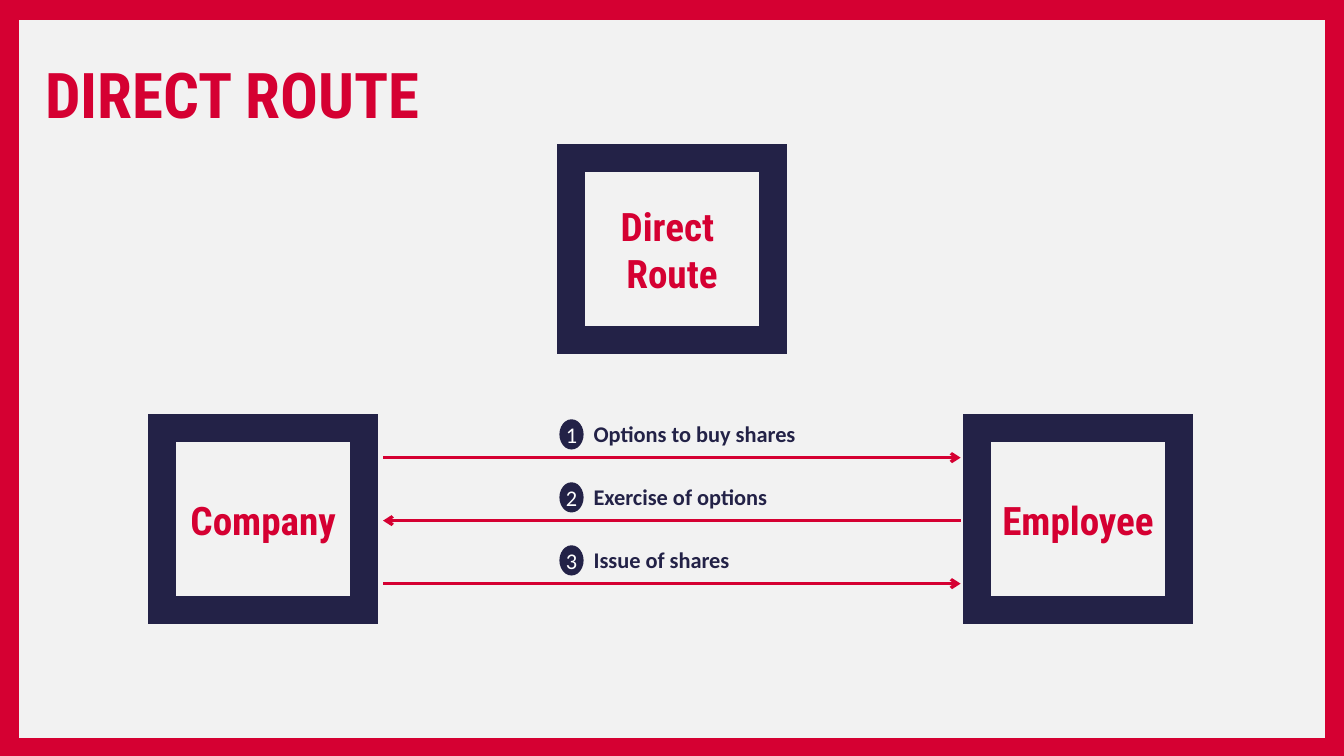
import pptx
import pptx.dml.color
import pptx.enum.shapes
import pptx.enum.text
import pptx.oxml.ns
import pptx.util
from lxml import etree

Pt = pptx.util.Pt
SHAPES = pptx.enum.shapes.MSO_SHAPE
ALIGN = pptx.enum.text.PP_ALIGN
ANCHOR = pptx.enum.text.MSO_ANCHOR
COLOURS = {"red": "D50032", "navy": "232247", "paper": "F2F2F2", "white": "FFFFFF"}
HEADING_FONT = "Roboto Condensed"
BODY_FONT = "Calibri"

PARTY_SIZE = (144, 130)
PARTIES = [("Direct \vRoute", 408, 113), ("Company", 116, 306), ("Employee", 698, 306)]
STEPS = [
    ("Options to buy shares", True),
    ("Exercise of options", False),
    ("Issue of shares", True),
]
STEPS_BOX = (273.6, 296.5, 412.6)
STEP_PITCH = 45


def colour(name):
    return pptx.dml.color.RGBColor.from_string(COLOURS[name])


def write(shape, text, font, size, ink, bold=True, align=ALIGN.LEFT):
    frame = shape.text_frame
    frame.word_wrap = True
    frame.vertical_anchor = ANCHOR.MIDDLE
    frame.text = text
    for para in frame.paragraphs:
        para.alignment = align
        for span in para.runs:
            span.font.name = font
            span.font.size = Pt(size)
            span.font.bold = bold
            span.font.color.rgb = colour(ink)


def add_block(page, kind, box, fill=None, line=None, width=0):
    """Add a flat preset shape; a missing fill or line is left out."""
    shape = page.shapes.add_shape(kind, *map(Pt, box))
    shape.shadow.inherit = False
    if fill:
        shape.fill.solid()
        shape.fill.fore_color.rgb = colour(fill)
    else:
        shape.fill.background()
    if line:
        shape.line.color.rgb = colour(line)
        shape.line.width = Pt(width)
        join = etree.SubElement(shape.line._get_or_add_ln(), pptx.oxml.ns.qn("a:miter"))
        join.set("lim", "800000")
    else:
        shape.line.fill.background()
    return shape


def add_arrow(page, start, end, y):
    arrow = page.shapes.add_connector(
        pptx.enum.shapes.MSO_CONNECTOR.STRAIGHT, Pt(start), Pt(y), Pt(end), Pt(y))
    arrow.line.color.rgb = colour("red")
    arrow.line.width = Pt(2.25)
    tip = etree.SubElement(arrow.line._get_or_add_ln(), pptx.oxml.ns.qn("a:tailEnd"))
    tip.set("type", "arrow")
    etree.SubElement(arrow._element.spPr, pptx.oxml.ns.qn("a:effectLst"))


def add_title(page, left, top, width, height):
    title = page.shapes.title
    title.left, title.top, title.width, title.height = map(Pt, (left, top, width, height))
    write(title, "DIRECT ROUTE", HEADING_FONT, 45, "red")


def add_party(page, name, left, top):
    party = add_block(page, SHAPES.RECTANGLE, (left, top, *PARTY_SIZE), "paper", "navy", 20)
    write(party, name, HEADING_FONT, 28, "red", align=ALIGN.CENTER)


def add_step(page, number, text, to_right, left, top, width):
    """Add a numbered label with the arrow that runs below it."""
    ends = (left, left + width) if to_right else (left + width, left)
    add_arrow(page, *ends, top + 30.4)

    badge = add_block(page, SHAPES.OVAL, (left + 126, top + 3, 17.3, 21.6), "navy")
    write(badge, str(number), BODY_FONT, 16, "white", bold=False, align=ALIGN.CENTER)
    frame = badge.text_frame
    frame.margin_left = frame.margin_right = frame.margin_top = frame.margin_bottom = 0

    label = page.shapes.add_textbox(Pt(left + 143.3), Pt(top), Pt(187), Pt(26.6))
    write(label, text, BODY_FONT, 16, "navy")


def add_route_slide(deck):
    page = deck.slides.add_slide(deck.slide_layouts[5])
    page.background.fill.solid()
    page.background.fill.fore_color.rgb = colour("paper")
    add_block(page, SHAPES.RECTANGLE, (6, 6.5, 948, 528), line="red", width=15)
    add_title(page, 25, 36, 701, 62)
    for party in PARTIES:
        add_party(page, *party)
    left, top, width = STEPS_BOX
    for index, (text, to_right) in enumerate(STEPS):
        add_step(page, index + 1, text, to_right, left, top + index * STEP_PITCH, width)


def main():
    deck = pptx.Presentation()
    deck.slide_width, deck.slide_height = Pt(960), Pt(540)
    add_route_slide(deck)
    deck.save("out.pptx")


if __name__ == "__main__":
    main()
